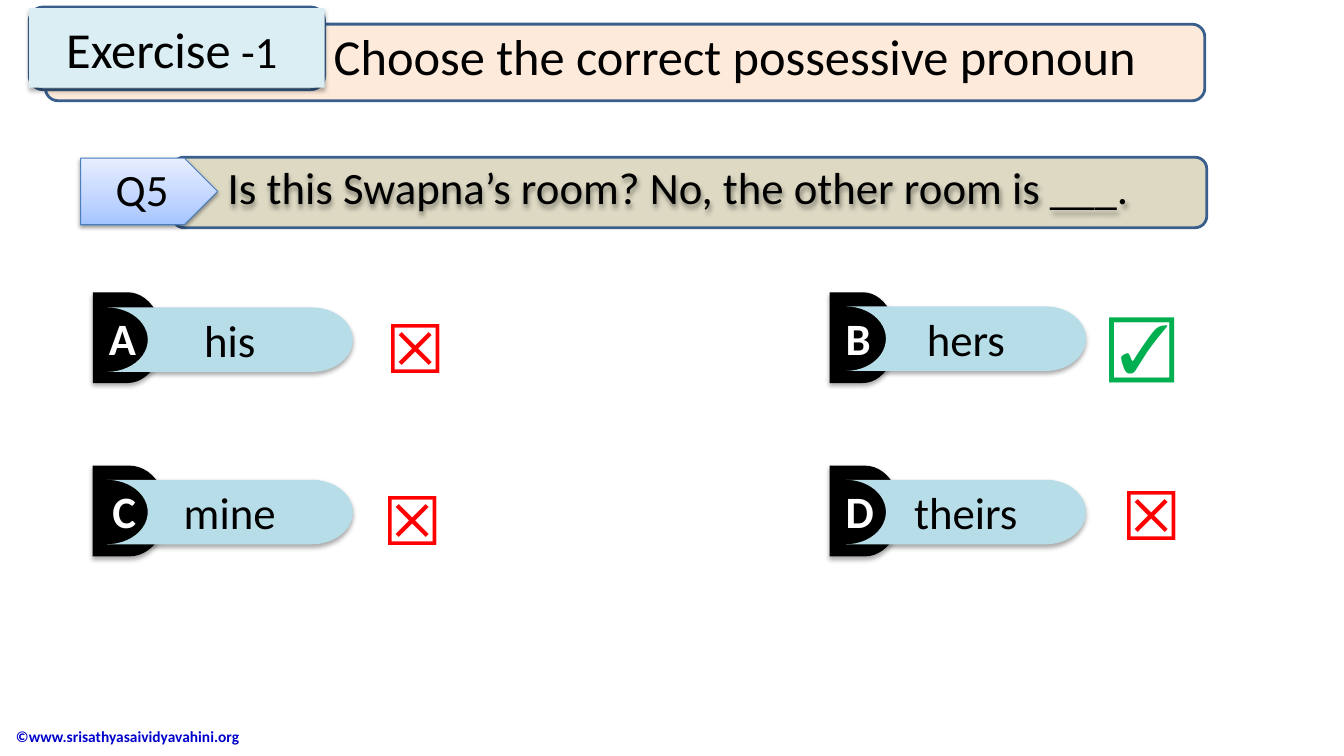
from dataclasses import dataclass
import copy

import lxml.etree
import pptx
import pptx.dml.color
import pptx.enum.shapes
import pptx.enum.text
import pptx.oxml.ns
import pptx.util

Inches = pptx.util.Inches
SHAPE = pptx.enum.shapes.MSO_SHAPE
ALIGN = pptx.enum.text.PP_ALIGN
ANCHOR = pptx.enum.text.MSO_ANCHOR
qn = pptx.oxml.ns.qn

FONT = "Calibri"
OUTLINE = "3A5F8C"


@dataclass(frozen=True)
class Shadow:
    opacity: int
    blur: float
    distance: float


@dataclass(frozen=True)
class Mark:
    symbol: str
    color: str
    left: float
    top: float
    width: float


@dataclass(frozen=True)
class Answer:
    letter: str
    word: str
    left: float
    top: float
    badge_width: float
    pill_left: float
    pill_top: float
    pill_width: float
    mark: Mark


SOFT = Shadow(32, 3.5, 2.2)
TIGHT = Shadow(38, 3.1, 1.6)
RED, GREEN = "FF0000", "00B050"

ANSWERS = [
    Answer("A", "his", 0.92, 2.9, 0.69, 1.06, 3.05, 2.44, Mark("☒", RED, 3.73, 2.99, 0.62)),
    Answer("B", "hers", 8.23, 2.9, 0.66, 8.39, 3.04, 2.38, Mark("☑", GREEN, 10.89, 2.95, 0.88)),
    Answer("C", "mine", 0.92, 4.62, 0.73, 1.06, 4.76, 2.44, Mark("☒", RED, 3.7, 4.7, 0.66)),
    Answer("D", "theirs", 8.23, 4.62, 0.7, 8.39, 4.76, 2.38, Mark("☒", RED, 11.02, 4.65, 0.62)),
]


def rgb(value: str) -> pptx.dml.color.RGBColor:
    return pptx.dml.color.RGBColor.from_string(value)


def add_shadow(shape, shadow: Shadow) -> None:
    shape.shadow.inherit = False
    effects = shape.element.spPr.find(qn("a:effectLst"))
    outer = lxml.etree.SubElement(
        effects, qn("a:outerShdw"), blurRad=str(pptx.util.Pt(shadow.blur)),
        dist=str(pptx.util.Pt(shadow.distance)), dir="5400000", rotWithShape="0")
    color = lxml.etree.SubElement(outer, qn("a:srgbClr"), val="000000")
    lxml.etree.SubElement(color, qn("a:alpha"), val=str(shadow.opacity * 1000))


def write(shape, text: str, size: float, color: str = "000000", bold: bool = False,
          align=ALIGN.CENTER, anchor=ANCHOR.TOP, wrap: bool = True) -> None:
    frame = shape.text_frame
    frame.word_wrap = wrap
    frame.vertical_anchor = anchor
    paragraph = frame.paragraphs[0]
    paragraph.text = text
    paragraph.alignment = align
    font = paragraph.font
    font.name, font.size, font.bold = FONT, pptx.util.Pt(size), bold
    font.color.rgb = rgb(color)


def add_box(slide, kind, left: float, top: float, width: float, height: float,
            fill: str, line: str = "", shadow: Shadow | None = None):
    shape = slide.shapes.add_shape(
        kind, Inches(left), Inches(top), Inches(width), Inches(height))
    shape.shadow.inherit = False
    shape.fill.solid()
    shape.fill.fore_color.rgb = rgb(fill)
    if line:
        shape.line.color.rgb = rgb(line)
        shape.line.width = pptx.util.Pt(2)
    else:
        shape.line.fill.background()
    if shadow:
        add_shadow(shape, shadow)
    return shape


def add_label(slide, left: float, top: float, width: float, height: float,
              text: str, size: float, **style):
    label = slide.shapes.add_textbox(
        Inches(left), Inches(top), Inches(width), Inches(height))
    write(label, text, size, **style)
    return label


def add_gradient(shape, colors: list[str], middle: float) -> None:
    shape.fill.gradient()
    shape.fill.gradient_angle = 90
    stops = shape.element.spPr.find(qn("a:gradFill")).find(qn("a:gsLst"))
    stops.insert(1, copy.deepcopy(stops[0]))
    for stop, color, position in zip(shape.fill.gradient_stops, colors, (0, middle, 1)):
        stop.color.rgb = rgb(color)
        stop.position = position


def add_answer(slide, answer: Answer) -> None:
    badge = add_box(slide, SHAPE.FLOWCHART_DELAY, answer.left, answer.top,
                    answer.badge_width, 0.9, "000000", shadow=SOFT)
    write(badge, answer.letter, 32, "FFFFFF", bold=True)
    pill = add_box(slide, SHAPE.FLOWCHART_STORED_DATA, answer.pill_left, answer.pill_top,
                   answer.pill_width, 0.64, "B7DEE8", shadow=SOFT)
    pill.element.spPr.get_or_add_xfrm().set("flipH", "1")
    write(pill, answer.word, 32)
    mark = answer.mark
    add_label(slide, mark.left, mark.top, mark.width, 0.91, mark.symbol, 48,
              color=mark.color, bold=True)


def add_question(slide) -> None:
    add_box(slide, SHAPE.FLOWCHART_ALTERNATE_PROCESS, 1.71, 1.56, 10.26, 0.7,
            "DDD9C3", OUTLINE)
    question = add_label(slide, 2.16, 1.54, 9.15, 0.64,
                         "Is this Swapna’s room? No, the other room is ___.", 32,
                         align=ALIGN.LEFT)
    add_shadow(question, TIGHT)
    arrow = add_box(slide, SHAPE.PENTAGON, 0.8, 1.57, 1.36, 0.66,
                    "BFD4FF", "4B7EBC", TIGHT)
    arrow.line.width = pptx.util.Pt(0.75)
    add_gradient(arrow, ["A4C4FF", "BFD4FF", "E6EEFF"], 0.35)
    add_label(slide, 0.95, 1.56, 0.92, 0.64, "Q5", 32)


def add_heading(slide) -> None:
    add_box(slide, SHAPE.FLOWCHART_ALTERNATE_PROCESS, 0.45, 0.24, 11.5, 0.76,
            "FDEADA", OUTLINE)
    add_box(slide, SHAPE.ROUNDED_RECTANGLE, 0.29, 0.07, 2.93, 0.82, "DBEEF4", OUTLINE)
    exercise = add_box(slide, SHAPE.RECTANGLE, 0.29, 0.08, 2.93, 0.79,
                       "DBEEF4", shadow=SOFT)
    write(exercise, "Exercise", 36, anchor=ANCHOR.MIDDLE)
    number = exercise.text_frame.paragraphs[0].add_run()
    number.text = " -1 "
    number.font.size = pptx.util.Pt(32)

    title = slide.shapes.title
    title.left, title.top = Inches(3.21), Inches(0.2)
    title.width, title.height = Inches(8.89), Inches(0.79)
    write(title, "Choose the correct possessive pronoun", 36, align=ALIGN.LEFT, wrap=False)
    title.text_frame.auto_size = pptx.enum.text.MSO_AUTO_SIZE.NONE
    # Bring the title in front of its banner
    title.element.getparent().append(title.element)


def main() -> None:
    presentation = pptx.Presentation()
    presentation.slide_width, presentation.slide_height = Inches(13.33), Inches(7.5)
    slide = presentation.slides.add_slide(presentation.slide_layouts.get_by_name("Title Only"))

    # Footer
    add_label(slide, 0.06, 7.1, 3.53, 0.41, "©www.srisathyasaividyavahini.org", 11,
              color="0000CC", bold=True, align=ALIGN.LEFT, anchor=ANCHOR.MIDDLE)
    # Question, answers and heading
    add_question(slide)
    for answer in ANSWERS:
        add_answer(slide, answer)
    add_heading(slide)
    presentation.save("out.pptx")


if __name__ == "__main__":
    main()
